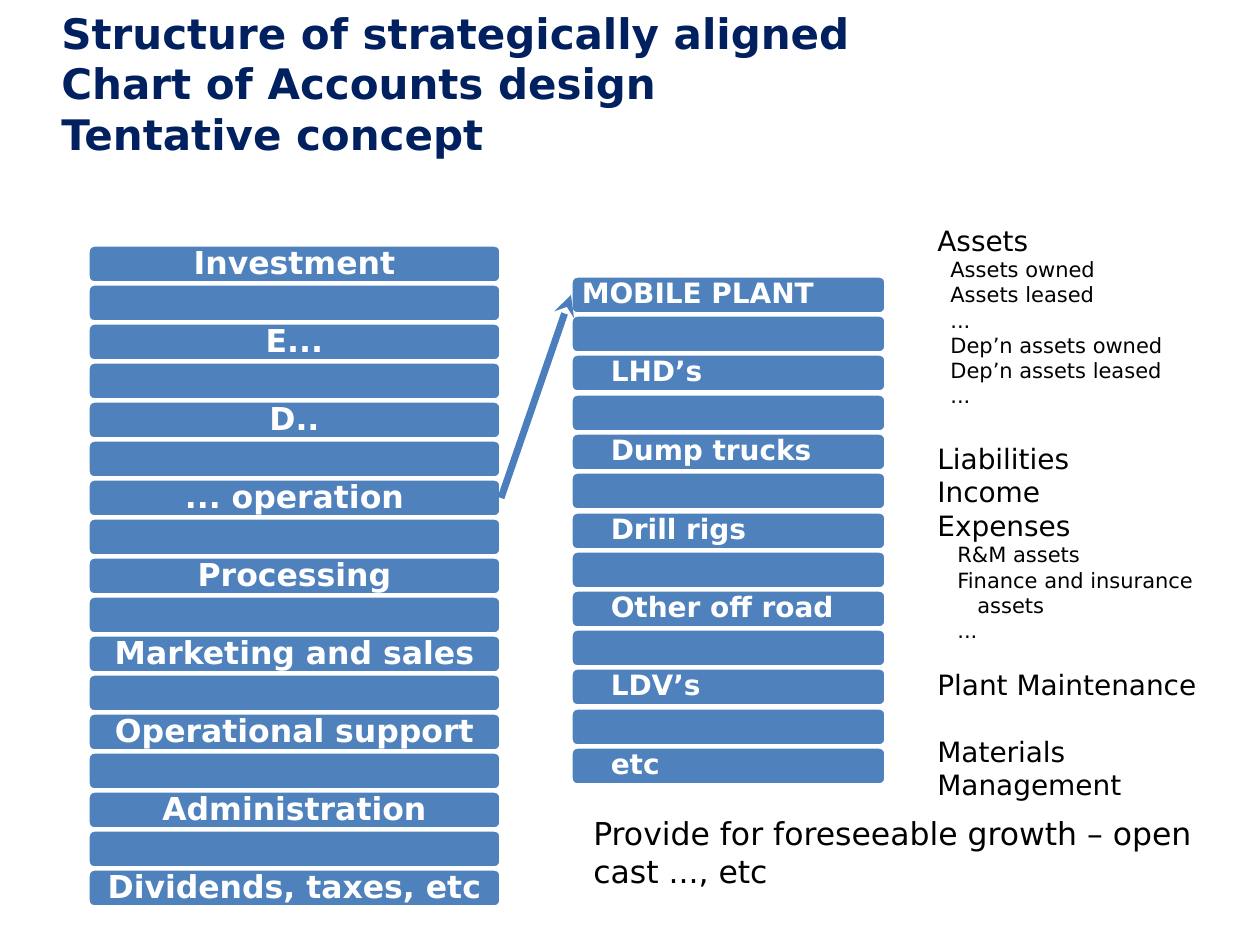
from lxml import etree
from pptx import Presentation
from pptx.dml.color import RGBColor
from pptx.enum.shapes import MSO_CONNECTOR, MSO_SHAPE
from pptx.enum.text import MSO_ANCHOR, PP_ALIGN
from pptx.oxml.ns import qn
from pptx.util import Emu, Pt

STRAIGHT = MSO_CONNECTOR.STRAIGHT
ROUNDED = MSO_SHAPE.ROUNDED_RECTANGLE
MIDDLE, TOP = MSO_ANCHOR.MIDDLE, MSO_ANCHOR.TOP
CENTER, LEFT = PP_ALIGN.CENTER, PP_ALIGN.LEFT
LEFT_SIDE, RIGHT_SIDE = 1, 3
FONT = "DejaVu Sans"
COLORS = {"title": "002060", "bar": "4F81BD", "arrow": "4B7EBC",
          "white": "FFFFFF", "text": "000000"}


def px(length):
    """Turn px, 126 to the inch, into EMU."""
    return Emu(round(length * 914400 / 126))


def write(frame, lines, color, bold=False, alignment=LEFT, line_spacing=1.0):
    """Write lines of (text, size in pt, indent in px, space before in pt)."""
    frame.word_wrap = True
    for index, (text, size, indent, before) in enumerate(lines):
        paragraph = frame.paragraphs[0] if index == 0 else frame.add_paragraph()
        run = paragraph.add_run()
        run.text = text
        if indent:
            paragraph._p.get_or_add_pPr().set("marL", str(px(indent)))
        paragraph_format = {"alignment": alignment, "line_spacing": line_spacing,
                            "space_before": Pt(before)}
        for name, value in paragraph_format.items():
            setattr(paragraph, name, value)
        for name, value in {"name": FONT, "size": Pt(size), "bold": bold}.items():
            setattr(run.font, name, value)
        run.font.color.rgb = RGBColor.from_string(COLORS[color])


presentation = Presentation()
presentation.slide_width, presentation.slide_height = px(1260), px(945)
slide = presentation.slides.add_slide(presentation.slide_layouts[6])

# Two stacks of bars, with an empty bar between each two labels
activities = ["Investment", "E...", "D..", "... operation", "Processing",
              "Marketing and sales", "Operational support", "Administration",
              "Dividends, taxes, etc"]
plant = ["MOBILE PLANT", "LHD’s", "Dump trucks", "Drill rigs", "Other off road",
         "LDV’s", "etc"]
stacks = [
    {"labels": activities, "left": 88, "top": 245, "width": 413, "span": 624,
     "size": 18, "alignment": CENTER, "indent": 0},
    {"labels": plant, "left": 571, "top": 276, "width": 315, "span": 471,
     "size": 16, "alignment": LEFT, "indent": 29},
]
labelled_bars = {}
for stack in stacks:
    labels = stack["labels"]
    steps = 2 * len(labels) - 2
    for step in range(steps + 1):
        top = stack["top"] + round(step * stack["span"] / steps)
        bar = slide.shapes.add_shape(ROUNDED, px(stack["left"]), px(top),
                                     px(stack["width"]), px(38))
        bar.shadow.inherit = False
        bar.fill.solid()
        bar.fill.fore_color.rgb = RGBColor.from_string(COLORS["bar"])
        bar.line.color.rgb = RGBColor.from_string(COLORS["white"])
        bar.line.width = Pt(2)
        if step % 2:
            continue
        label = labels[step // 2]
        labelled_bars[label] = bar
        frame = bar.text_frame
        frame_format = {"vertical_anchor": MIDDLE, "margin_top": 0, "margin_bottom": 0,
                        "margin_left": px(9), "margin_right": px(9)}
        for name, value in frame_format.items():
            setattr(frame, name, value)
        indent = stack["indent"] if step else 0
        write(frame, [(label, stack["size"], indent, 0)], "white", True,
              stack["alignment"], 0.9)

# Arrow from the operation to its mobile plant
arrow = slide.shapes.add_connector(STRAIGHT, px(501), px(498), px(571), px(295))
arrow.begin_connect(labelled_bars["... operation"], RIGHT_SIDE)
arrow.end_connect(labelled_bars["MOBILE PLANT"], LEFT_SIDE)
arrow.line.color.rgb = RGBColor.from_string(COLORS["arrow"])
arrow.line.width = Pt(4)
etree.SubElement(arrow.line._get_or_add_ln(), qn("a:tailEnd"), type="stealth")
etree.SubElement(arrow._element.spPr, qn("a:effectLst"))

# Title, account list and note
title = [("Structure of strategically aligned Chart of Accounts design", 24, 0, 0),
         ("Tentative concept", 24, 0, 0)]
accounts = [
    ("Assets", 16, 0, 0),
    ("Assets owned", 12, 13, 0),
    ("Assets leased", 12, 13, 0),
    ("...", 12, 13, 0),
    ("Dep’n assets owned", 12, 13, 0),
    ("Dep’n assets leased", 12, 13, 0),
    ("...", 12, 13, 0),
    ("Liabilities", 16, 0, 19),
    ("Income", 16, 0, 0),
    ("Expenses", 16, 0, 0),
    ("R&M assets", 12, 20, 0),
    ("Finance and insurance", 12, 20, 0),
    ("assets", 12, 40, 0),
    ("...", 12, 20, 0),
    ("Plant Maintenance", 16, 0, 14),
    ("Materials Management", 16, 0, 19),
]
note = [("Provide for foreseeable growth – open cast ..., etc", 18, 0, 0)]
text_boxes = [
    ((49, 29, 886, 108), title, "title", True, MIDDLE),
    ((925, 217, 335, 598), accounts, "text", False, TOP),
    ((581, 808, 630, 89), note, "text", False, TOP),
]
for place, lines, color, bold, anchor in text_boxes:
    text_box = slide.shapes.add_textbox(*map(px, place))
    text_box.text_frame.vertical_anchor = anchor
    write(text_box.text_frame, lines, color, bold)

presentation.save("out.pptx")
